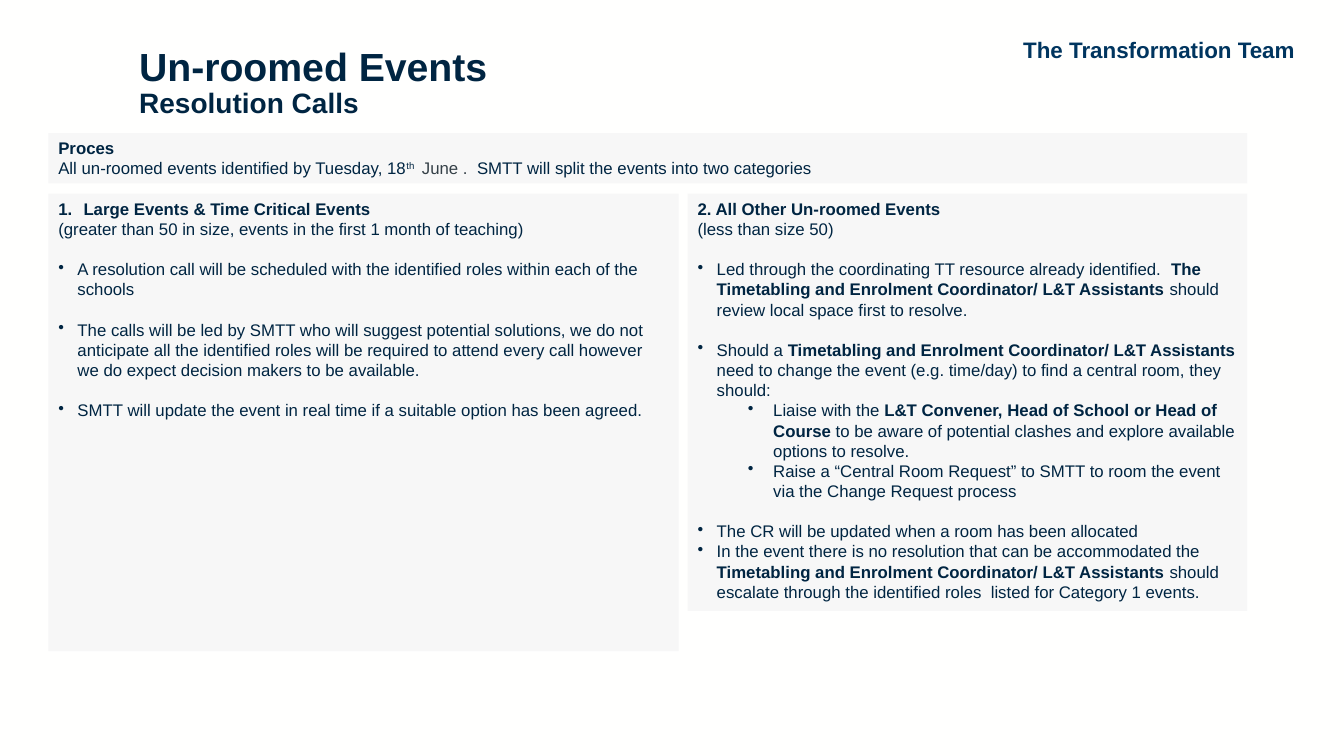
from pptx import Presentation
from pptx.dml.color import RGBColor
from pptx.enum.shapes import MSO_SHAPE
from pptx.enum.text import MSO_ANCHOR, MSO_AUTO_SIZE, PP_ALIGN
from pptx.oxml.ns import qn
from pptx.util import Inches, Pt
from lxml import etree

RECT = MSO_SHAPE.RECTANGLE
TOP, MIDDLE = MSO_ANCHOR.TOP, MSO_ANCHOR.MIDDLE
NO_FIT = MSO_AUTO_SIZE.NONE
LEFT, CENTER = PP_ALIGN.LEFT, PP_ALIGN.CENTER

NAVY = RGBColor(0x00, 0x25, 0x42)
BLUE = RGBColor(0x00, 0x35, 0x5F)
SLATE = RGBColor(0x35, 0x40, 0x47)
PALE = RGBColor(0xF7, 0xF7, 0xF7)
PAPER = RGBColor(0xFF, 0xFF, 0xFE)

FONT = "Arial"
GAP = 14.4  # one line of body text, in points

# Paragraph kinds: left margin and hanging indent in inches, bullet tag, attributes
KINDS = {
    "plain": (0, 0, "a:buNone", {}),
    "number": (0.25, 0.25, "a:buAutoNum", {"type": "arabicPeriod"}),
    "bullet": (0.19, 0.19, "a:buChar", {"char": "•"}),
    "sub": (0.75, 0.25, "a:buChar", {"char": "•"}),
}

# Each line: kind, lines of space before, text with **bold** parts
LARGE = [
    ("number", 0, "**Large Events & Time Critical Events**"),
    ("plain", 0, "(greater than 50 in size, events in the first 1 month of teaching)"),
    ("bullet", 1, "A resolution call will be scheduled with the identified roles "
                  "within each of the schools"),
    ("bullet", 1, "The calls will be led by SMTT who will suggest potential solutions, "
                  "we do not anticipate all the identified roles will be required to "
                  "attend every call however we do expect decision makers to be available."),
    ("bullet", 1, "SMTT will update the event in real time if a suitable option "
                  "has been agreed."),
]
OTHER = [
    ("plain", 0, "**2. All Other Un-roomed Events**"),
    ("plain", 0, "(less than size 50)"),
    ("bullet", 1, "Led through the coordinating TT resource already identified.  "
                  "**The Timetabling and Enrolment Coordinator/ L&T Assistants **"
                  "should review local space first to resolve."),
    ("bullet", 1, "Should a **Timetabling and Enrolment Coordinator/ L&T Assistants **"
                  "need to change the event (e.g. time/day) to find a central room, "
                  "they should:"),
    ("sub", 0, "Liaise with the **L&T Convener, Head of School or Head of Course **"
               "to be aware of potential clashes and explore available options to resolve."),
    ("sub", 0, "Raise a “Central Room Request” to SMTT to room the event "
               "via the Change Request process"),
    ("bullet", 1, "The CR will be updated when a room has been allocated"),
    ("bullet", 0, "In the event there is no resolution that can be accommodated the "
                  "**Timetabling and Enrolment Coordinator/ L&T Assistants **"
                  "should escalate through the identified roles  listed for "
                  "Category 1 events."),
]
PROCESS = [
    ("plain", 0, "**Proces**"),
    ("plain", 0, "All un-roomed events identified by Tuesday, 18"),
]


def style(para, size, color, bold=False):
    font = para.font
    font.name, font.size, font.bold = FONT, Pt(size), bold
    font.color.rgb = color


def indent(para, kind):
    margin, hang, tag, attrs = KINDS[kind]
    props = para._p.get_or_add_pPr()
    props.set("marL", str(Inches(margin)))
    props.set("indent", str(-Inches(hang)))
    if kind == "sub":
        para.level = 1
    etree.SubElement(props, qn(tag), attrs)


def add_panel(slide, left, top, width, height, lines):
    """Draw a pale box of text and return its last paragraph."""
    panel = slide.shapes.add_shape(
        RECT, Inches(left), Inches(top), Inches(width), Inches(height))
    panel.shadow.inherit = False
    panel.fill.solid()
    panel.fill.fore_color.rgb = PALE
    panel.line.fill.background()
    frame = panel.text_frame
    frame.word_wrap = True
    frame.vertical_anchor = TOP
    for i, (kind, gap, text) in enumerate(lines):
        para = frame.add_paragraph() if i else frame.paragraphs[0]
        para.alignment = LEFT
        para.space_before = Pt(gap * GAP)
        indent(para, kind)
        parts = text.split("**")
        all_bold = len(parts) == 3 and not parts[0] and not parts[2]
        style(para, 12, NAVY, all_bold)
        for j, part in enumerate(parts):
            if part:
                run = para.add_run()
                run.text = part
                if j % 2 and not all_bold:
                    run.font.bold = True
    return para


def add_date(para):
    """Finish the process line with its raised ordinal and grey month."""
    raised = para.add_run()
    raised.text = "th "
    raised.font._element.set("baseline", "30000")
    month = para.add_run()
    month.text = " June . "
    month.font.color.rgb = SLATE
    para.add_run().text = " SMTT will split the events into two categories"


def set_title(slide):
    title = slide.shapes.title
    title.left, title.top = Inches(1.28), Inches(0.23)
    title.width, title.height = Inches(8.32), Inches(1.2)
    frame = title.text_frame
    frame.auto_size = NO_FIT
    frame.vertical_anchor = MIDDLE
    para = frame.paragraphs[0]
    para.alignment = LEFT
    para.line_spacing = 0.9
    style(para, 28, NAVY, True)
    para.add_run().text = "Un-roomed Events"
    para.add_line_break()
    sub = para.add_run()
    sub.text = "Resolution Calls"
    sub.font.size = Pt(20)


def add_team(slide):
    box = slide.shapes.add_textbox(
        Inches(9.95), Inches(0.31), Inches(3.09), Inches(0.37))
    box.text_frame.word_wrap = True
    para = box.text_frame.paragraphs[0]
    para.text = "The Transformation Team"
    para.alignment = CENTER
    style(para, 16, BLUE, True)


def main():
    deck = Presentation()
    deck.slide_width, deck.slide_height = Inches(13.33), Inches(7.5)
    slide = deck.slides.add_slide(deck.slide_layouts[5])
    slide.background.fill.solid()
    slide.background.fill.fore_color.rgb = PAPER
    add_team(slide)
    set_title(slide)
    add_panel(slide, 0.48, 1.92, 6.25, 4.54, LARGE)
    add_panel(slide, 6.82, 1.92, 5.55, 4.14, OTHER)
    add_date(add_panel(slide, 0.48, 1.32, 11.89, 0.5, PROCESS))
    deck.save("out.pptx")


if __name__ == "__main__":
    main()
